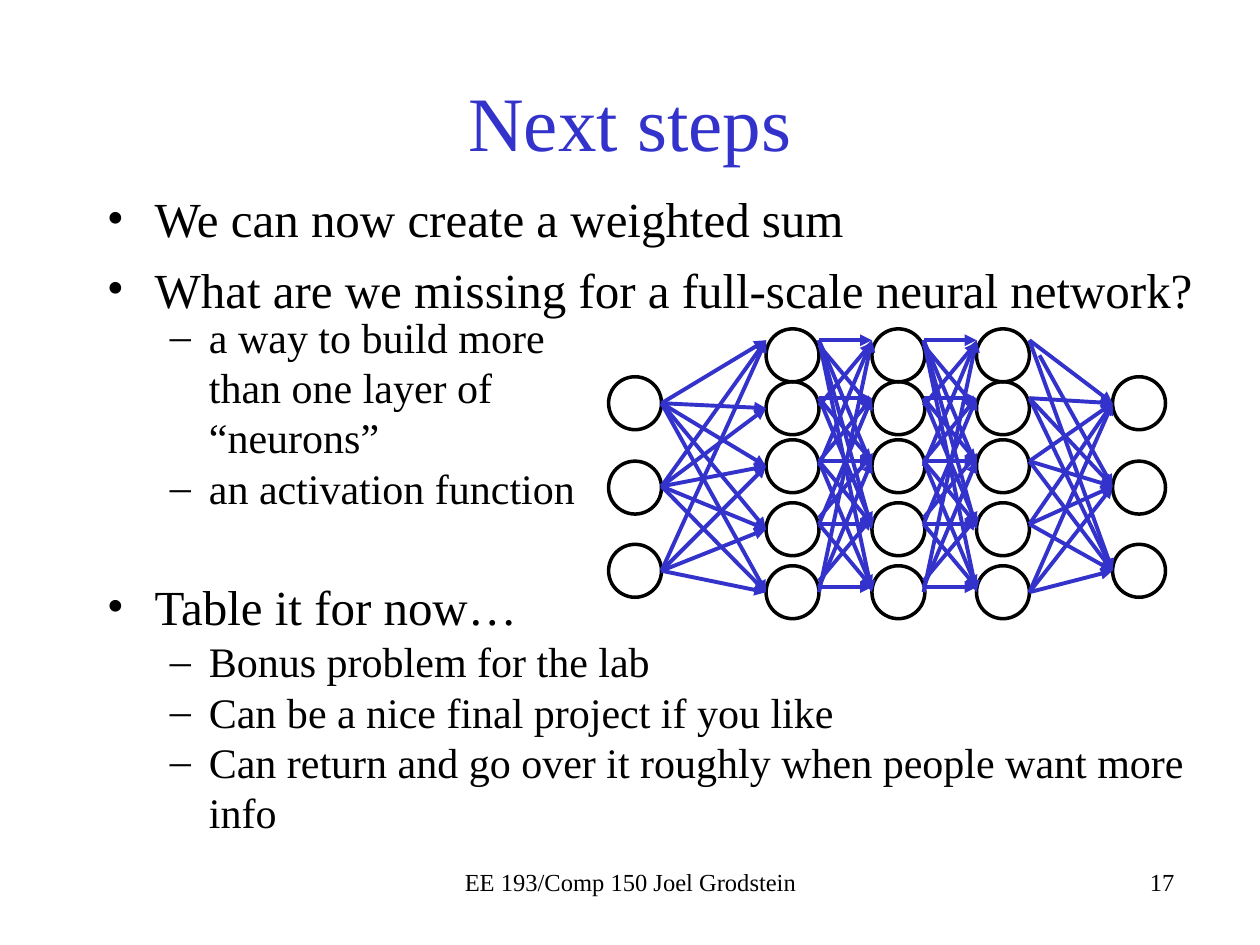
"""Build the "Next steps" slide: bullet lists beside a layered neural network."""
import lxml.etree
import pptx
import pptx.dml.color
import pptx.enum.shapes
import pptx.enum.text
import pptx.oxml.ns
import pptx.util

Inches, Pt = pptx.util.Inches, pptx.util.Pt
Align, Anchor = pptx.enum.text.PP_ALIGN, pptx.enum.text.MSO_ANCHOR
FONT, BLACK, BLUE = "Times New Roman", "000000", "3333CC"

TITLE = "Next steps"
LISTS = [
    ((0.75, 1.45, 9, 1.05), [
        (0, "We can now create a weighted sum"),
        (0, "What are we missing for a full-scale neural network?")]),
    ((0.75, 2.42, 4.25, 1.9), [
        (1, "a way to build more than one layer of “neurons”"),
        (1, "an activation function")]),
    ((0.75, 4.53, 9, 2.1), [
        (0, "Table it for now…"),
        (1, "Bonus problem for the lab"),
        (1, "Can be a nice final project if you like"),
        (1, "Can return and go over it roughly when people want more info")]),
]
FOOTERS = [
    ((3.42, 6.83, 3.17, 0.34), "EE 193/Comp 150 Joel Grodstein", Align.CENTER),
    ((6.25, 6.83, 3.17, 0.5), "17", Align.RIGHT),
]
LEVELS = [
    {"bullet": "•", "size": 28, "margin": 0.38, "hang": 0.38, "before": 6.5},
    {"bullet": "–", "size": 24, "margin": 0.81, "hang": 0.31, "before": 0},
]

NEURON = 0.42
OUTER_TOPS = [2.99, 3.66, 4.32]
HIDDEN_TOPS = [2.61, 3.03, 3.49, 3.99, 4.49]
LAYERS = [(4.83, OUTER_TOPS), (6.08, HIDDEN_TOPS), (6.92, HIDDEN_TOPS),
          (7.75, HIDDEN_TOPS), (8.83, OUTER_TOPS)]

OUTER_PORTS = [3.2, 3.86, 4.53]
HIDDEN_PORTS = [2.7, 3.24, 3.7, 4.2, 4.7]
INPUT_LINKS = {3.2: HIDDEN_PORTS, 3.86: HIDDEN_PORTS, 4.53: [2.7, 3.7, 4.2, 4.7]}
HIDDEN_LINKS = {
    2.7: [2.7, 3.7, 4.2, 4.7], 2.74: [3.24],
    3.16: [3.16, 3.66, 4.16], 3.22: [2.72],
    3.66: [3.16, 3.66, 4.16, 4.66], 3.7: [2.7],
    4.11: [3.61], 4.16: [3.16, 4.16, 4.66],
    4.61: [4.11], 4.66: [3.66, 4.66], 4.7: [2.7],
}
OUTPUT_LINKS = {2.7: [3.2, 4.53]} | {y: OUTER_PORTS for y in (3.16, 3.66, 4.16, 4.7)}
LINKS = [(5.25, 6.08, INPUT_LINKS), (6.5, 6.92, HIDDEN_LINKS),
         (7.33, 7.75, HIDDEN_LINKS), (8.17, 8.83, OUTPUT_LINKS),
         (8.25, 8.83, {2.82: [3.86]})]


def color(value):
    return pptx.dml.color.RGBColor.from_string(value)


def add_xml(parent, tag, **attributes):
    return lxml.etree.SubElement(parent, pptx.oxml.ns.qn(tag), attributes)


def style(para, size, value, align):
    para.alignment = align
    for span in para.runs:
        span.font.name = FONT
        span.font.size = Pt(size)
        span.font.color.rgb = color(value)


def add_text(page, frame, lines):
    box = page.shapes.add_textbox(*map(Inches, frame))
    box.text_frame.word_wrap = True
    box.text_frame.text = "\n".join(lines)
    return box.text_frame.paragraphs


def add_list(page, frame, items):
    paras = add_text(page, frame, [text for _, text in items])
    for para, (number, _) in zip(paras, items):
        level = LEVELS[number]
        style(para, level["size"], BLACK, Align.LEFT)
        para.level = number
        para.space_before = Pt(level["before"])
        properties = para._p.get_or_add_pPr()
        properties.set("marL", str(Inches(level["margin"])))
        properties.set("indent", str(-Inches(level["hang"])))
        add_xml(properties, "a:buFont", typeface=FONT)
        add_xml(properties, "a:buChar", char=level["bullet"])


def add_neuron(page, left, top):
    neuron = page.shapes.add_shape(
        pptx.enum.shapes.MSO_SHAPE.OVAL, *map(Inches, (left, top, NEURON, NEURON)))
    neuron.shadow.inherit = False
    neuron.fill.background()
    neuron.line.color.rgb = color(BLACK)
    neuron.line.width = Pt(2)


def add_arrow(page, *ends):
    arrow = page.shapes.add_connector(
        pptx.enum.shapes.MSO_CONNECTOR.STRAIGHT, *map(Inches, ends))
    arrow.line.color.rgb = color(BLUE)
    arrow.line.width = Pt(2.25)
    add_xml(arrow.line._get_or_add_ln(), "a:tailEnd", type="triangle")
    add_xml(arrow._element.spPr, "a:effectLst")


def main():
    deck = pptx.Presentation()
    deck.slide_width, deck.slide_height = Inches(10), Inches(7.5)
    page = deck.slides.add_slide(deck.slide_layouts[5])

    title = page.shapes.title
    title.left, title.top, title.width, title.height = map(Inches, (0.75, 0.33, 8.5, 1.25))
    title.text_frame.text = TITLE
    title.text_frame.vertical_anchor = Anchor.MIDDLE
    style(title.text_frame.paragraphs[0], 44, BLUE, Align.CENTER)

    for frame, text, align in FOOTERS:
        style(add_text(page, frame, [text])[0], 14, BLACK, align)
    for left, tops in LAYERS:
        for top in tops:
            add_neuron(page, left, top)
    for start_x, end_x, links in LINKS:
        for start_y, ends in links.items():
            for end_y in ends:
                add_arrow(page, start_x, start_y, end_x, end_y)
    for frame, items in LISTS:
        add_list(page, frame, items)
    deck.save("out.pptx")


if __name__ == "__main__":
    main()
